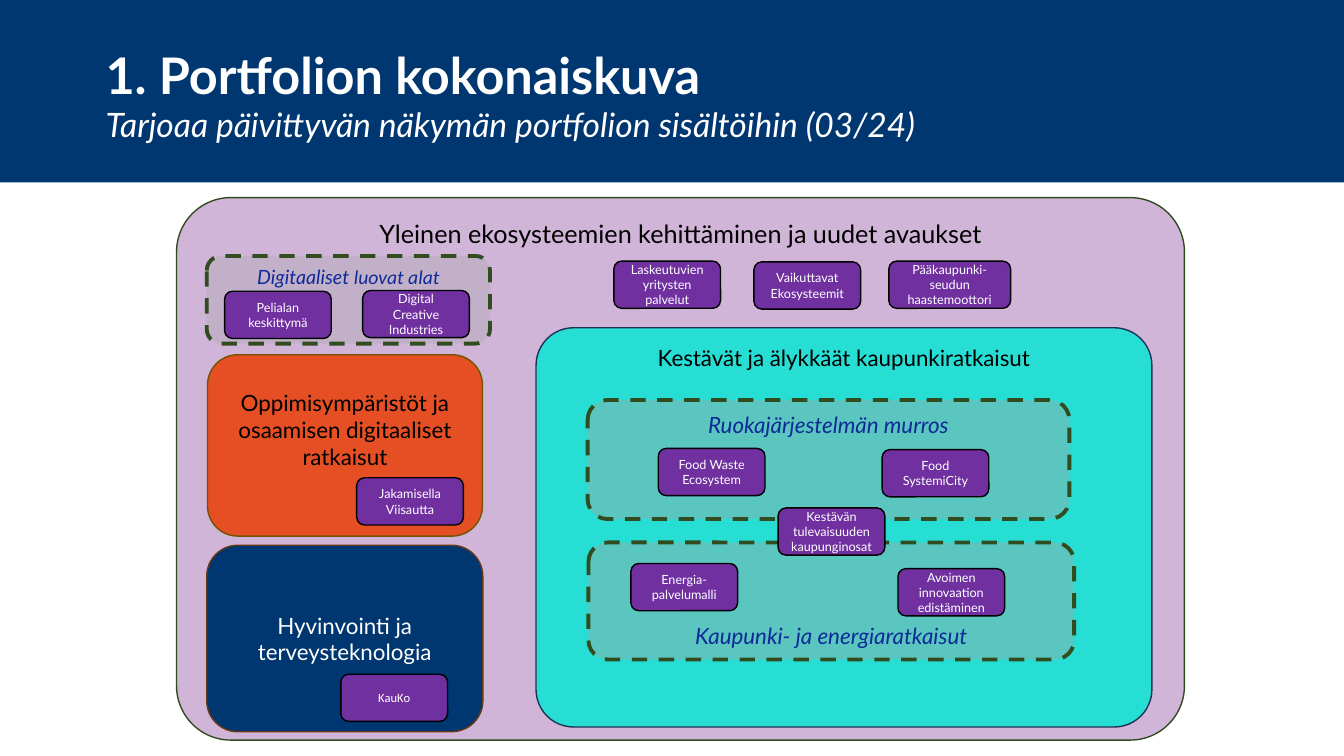
"""Build the portfolio overview slide."""
from typing import NamedTuple

from lxml import etree
from pptx import Presentation
from pptx import util as u
from pptx.dml.color import RGBColor
from pptx.enum import dml, shapes, text
from pptx.oxml.ns import qn

NAVY = RGBColor(0x00, 0x37, 0x70)
LILAC = RGBColor(0xD1, 0xB5, 0xD9)
TURQUOISE = RGBColor(0x26, 0xDE, 0xD4)
ORANGE = RGBColor(0xE5, 0x4F, 0x23)
PURPLE = RGBColor(0x70, 0x30, 0xA0)
GREY = RGBColor(0xA5, 0xA5, 0xA5)
WHITE = RGBColor(0xFF, 0xFF, 0xFF)
BLACK = RGBColor(0x00, 0x00, 0x00)
INK_BLUE = RGBColor(0x0D, 0x2A, 0x97)
FOREST = RGBColor(0x31, 0x4C, 0x1F)
DEEP_BLUE = RGBColor(0x1E, 0x32, 0x56)
OLIVE = RGBColor(0x70, 0x54, 0x00)
BROWN = RGBColor(0x68, 0x37, 0x15)

TOP, MIDDLE, BOTTOM = (text.MSO_ANCHOR.TOP, text.MSO_ANCHOR.MIDDLE,
                       text.MSO_ANCHOR.BOTTOM)
CHIP_WIDTH, CHIP_HEIGHT = 2.69, 1.19


class Box(NamedTuple):
    """A rectangle in centimetres."""
    left: float
    top: float
    width: float
    height: float

    def inner(self, left, top, width, height):
        """Return a box placed relative to this one."""
        return Box(self.left + left, self.top + top, width, height)

    def lengths(self):
        """Return the four sides as slide lengths."""
        return [u.Cm(side) for side in self]


def style_text(para, size, color, font="Lato", bold=False, italic=False):
    """Set the font of a whole paragraph."""
    para.font.size = u.Pt(size)
    para.font.name = font
    para.font.color.rgb = color
    para.font.bold = bold
    para.font.italic = italic


def add_card(page, box, fill, line, lines, size, color, anchor=TOP,
             radius=0.1667, font="Lato", italic=False):
    """Draw a rounded card with centred text."""
    card = page.shapes.add_shape(shapes.MSO_SHAPE.ROUNDED_RECTANGLE, *box.lengths())
    card.adjustments[0] = radius
    card.shadow.inherit = False
    card.fill.solid()
    card.fill.fore_color.rgb = fill
    card.line.color.rgb = line
    card.line.width = u.Pt(1)
    frame = card.text_frame
    frame.word_wrap = True
    frame.vertical_anchor = anchor
    frame.text = "\n".join(lines)
    for para in frame.paragraphs:
        para.alignment = text.PP_ALIGN.CENTER
        style_text(para, size, color, font, italic=italic)
    return card


def add_chip(page, box, left, top, label, width=CHIP_WIDTH, font="Lato"):
    """Draw one project chip relative to its box."""
    add_card(page, box.inner(left, top, width, CHIP_HEIGHT), PURPLE, BLACK,
             [label], 9, WHITE, MIDDLE, font=font)


def add_group(page, box, label, opacity, chips, size=16, anchor=TOP):
    """Draw a translucent dashed group and its chips."""
    group = add_card(page, box, GREY, FOREST, [label], size, INK_BLUE, anchor,
                     italic=True)
    group.line.width = u.Pt(2.75)
    group.line.dash_style = dml.MSO_LINE.DASH
    tint = group.fill._xPr.find(qn("a:solidFill"))[0]
    etree.SubElement(tint, qn("a:alpha"), val=str(opacity * 1000))
    for chip in chips:
        add_chip(page, box, *chip)
    return group


def add_header(page, box):
    """Draw the title band."""
    band = page.shapes.add_shape(shapes.MSO_SHAPE.RECTANGLE, *box.lengths())
    band.shadow.inherit = False
    band.fill.solid()
    band.fill.fore_color.rgb = NAVY
    band.line.fill.background()
    title = page.shapes.add_textbox(*box.inner(2.41, 0.53, 25.4, 3.68).lengths())
    frame = title.text_frame
    frame.word_wrap = True
    frame.vertical_anchor = MIDDLE
    frame.text = ("1. Portfolion kokonaiskuva\n"
                  "Tarjoaa päivittyvän näkymän portfolion sisältöihin (03/24)")
    heading, subtitle = frame.paragraphs
    style_text(heading, 36, WHITE, bold=True)
    style_text(subtitle, 24, WHITE, italic=True)


def add_creative(page, box):
    """Draw the digital creative industries group."""
    group = add_group(page, box, "Digitaaliset", 32, [
        (0.45, 0.89, "Pelialan keskittymä"),
        (3.93, 0.87, "Digital Creative Industries")], size=14)
    span = group.text_frame.paragraphs[0].add_run()
    span.text = " luovat alat"
    span.font.name = "Calibri"


def add_learning(page, box):
    """Draw the learning environments card."""
    card = add_card(page, box, ORANGE, OLIVE,
                    ["Oppimisympäristöt ja osaamisen digitaaliset ratkaisut"],
                    16, BLACK)
    card.text_frame.margin_top = u.Cm(0.64)
    add_chip(page, box, 3.76, 3.1, "Jakamisella Viisautta")


def add_wellbeing(page, box):
    """Draw the wellbeing and health technology card."""
    add_card(page, box, NAVY, BROWN, ["Hyvinvointi ja", "terveysteknologia"],
             16, WHITE, MIDDLE)
    add_chip(page, box, 3.38, 3.25, "KauKo", font="Calibri")


def add_city(page, box):
    """Draw the sustainable city panel with its two groups."""
    add_card(page, box, TURQUOISE, DEEP_BLUE,
             ["Kestävät ja älykkäät kaupunkiratkaisut"], 16, BLACK, radius=0.094)
    add_group(page, box.inner(1.32, 5.41, 12.24, 2.95),
              "Kaupunki- ja energiaratkaisut", 42, [
                  (1.07, 0.53, "Energia- palvelumalli"),
                  (7.8, 0.66, "Avoimen innovaation edistäminen")], anchor=BOTTOM)
    add_group(page, box.inner(1.3, 1.82, 12.14, 3), "Ruokajärjestelmän murros", 42, [
        (1.78, 1.22, "Food Waste Ecosystem"),
        (7.42, 1.25, "Food SystemiCity")])
    add_chip(page, box, 6.1, 4.54, "Kestävän tulevaisuuden kaupunginosat")


def add_portfolio(page, box):
    """Draw the whole portfolio map."""
    add_card(page, box, LILAC, FOREST,
             ["Yleinen ekosysteemien kehittäminen ja uudet avaukset"],
             18, BLACK, radius=0.1)
    add_chip(page, box, 11.02, 1.6, "Laskeutuvien yritysten palvelut")
    add_chip(page, box, 14.55, 1.62, "Vaikuttavat Ekosysteemit")
    add_chip(page, box, 17.95, 1.6, "Pääkaupunki-seudun haastemoottori", width=3.07)
    add_city(page, box.inner(9.06, 3.28, 15.52, 10.06))
    add_creative(page, box.inner(0.76, 1.47, 7.14, 2.21))
    add_learning(page, box.inner(0.78, 3.96, 6.93, 4.57))
    add_wellbeing(page, box.inner(0.76, 8.76, 6.96, 4.7))


def main():
    """Create and save the deck."""
    deck = Presentation()
    deck.slide_width, deck.slide_height = u.Cm(33.87), u.Cm(19.05)
    page = deck.slides.add_slide(deck.slide_layouts[6])
    add_header(page, Box(0, 0, 33.87, 4.6))
    add_portfolio(page, Box(4.45, 4.98, 25.4, 13.67))
    deck.save("out.pptx")


if __name__ == "__main__":
    main()
